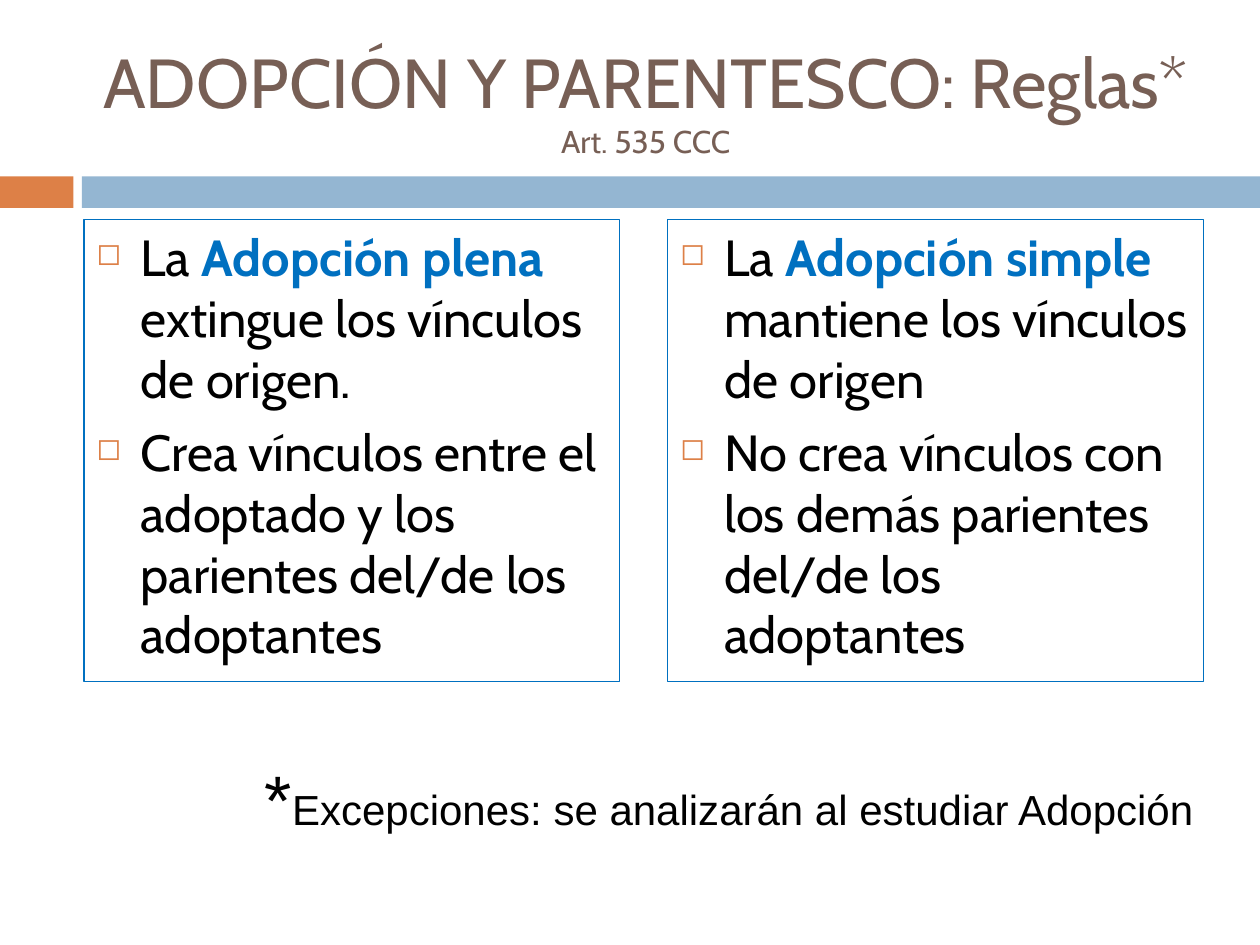
from lxml import etree
from pptx import Presentation
from pptx.dml.color import RGBColor
from pptx.enum.shapes import MSO_SHAPE
from pptx.enum.text import MSO_ANCHOR, MSO_AUTO_SIZE, PP_ALIGN
from pptx.oxml.ns import qn
from pptx.util import Pt

RECTANGLE = MSO_SHAPE.RECTANGLE
TOP, MIDDLE = MSO_ANCHOR.TOP, MSO_ANCHOR.MIDDLE
NO_AUTOFIT = MSO_AUTO_SIZE.NONE
LEFT, CENTER, RIGHT = PP_ALIGN.LEFT, PP_ALIGN.CENTER, PP_ALIGN.RIGHT

COLORS = {
    "orange": "DD8047",
    "band": "94B6D2",
    "title": "775F55",
    "accent": "0070C0",
    "text": "000000",
}
TITLE = {"name": "Cabin", "size": Pt(39.6), "bold": False}
SUBTITLE = {**TITLE, "size": Pt(18)}
BODY = {"name": "Cabin", "size": Pt(29), "bold": False}
STRONG = {**BODY, "bold": True}
NOTE = {"name": "Arial", "size": Pt(24), "bold": False}
NOTE_MARK = {**NOTE, "size": Pt(40)}

INDENT = Pt(25.2)
COLUMN_WIDTH, COLUMN_GAP = Pt(306), Pt(27.6)
COLUMNS = [
    [
        [("La ", BODY, "text"), ("Adopción plena ", STRONG, "accent"),
         ("extingue los vínculos de origen.", BODY, "text")],
        [("Crea vínculos entre el adoptado y los parientes del/de los adoptantes",
          BODY, "text")],
    ],
    [
        [("La ", BODY, "text"), ("Adopción simple ", STRONG, "accent"),
         ("mantiene los vínculos de origen", BODY, "text")],
        [("No crea vínculos con los demás parientes del/de los adoptantes",
          BODY, "text")],
    ],
]


def rgb(color):
    return RGBColor.from_string(COLORS[color])


def add_span(para, text, style, color):
    span = para.add_run()
    span.text = text
    for attribute, value in style.items():
        setattr(span.font, attribute, value)
    span.font.color.rgb = rgb(color)


def set_frame(frame, anchor):
    frame.word_wrap = True
    frame.auto_size = NO_AUTOFIT
    frame.vertical_anchor = anchor


def add_bullet(para):
    """Give the paragraph a hanging square bullet; call after setting its spacing."""
    properties = para._p.get_or_add_pPr()
    properties.set("marL", str(INDENT))
    properties.set("indent", str(-INDENT))
    color = etree.SubElement(properties, qn("a:buClr"))
    etree.SubElement(color, qn("a:srgbClr"), val=COLORS["orange"])
    etree.SubElement(properties, qn("a:buSzPct"), val="60000")
    etree.SubElement(properties, qn("a:buChar"), char="◻")


def add_rectangle(page, left, top, width, height):
    box = page.shapes.add_shape(RECTANGLE, left, top, width, height)
    box.shadow.inherit = False
    return box


def add_band(page, left, top, width, height):
    """Draw a short orange block and a long blue bar, parted by a narrow gap."""
    block, gap = Pt(42), Pt(4.8)
    bar_left = left + block + gap
    for x, part_width, color in (
        (left, block, "orange"),
        (bar_left, left + width - bar_left, "band"),
    ):
        bar = add_rectangle(page, x, top, part_width, height)
        bar.fill.solid()
        bar.fill.fore_color.rgb = rgb(color)
        bar.line.fill.background()


def place_title(page, left, top, width, height):
    title = page.shapes.title
    title.left, title.top, title.width, title.height = left, top, width, height
    set_frame(title.text_frame, MIDDLE)
    para = title.text_frame.paragraphs[0]
    para.alignment = CENTER
    add_span(para, "ADOPCIÓN Y PARENTESCO: Reglas*", TITLE, "title")
    para.add_line_break()
    add_span(para, "Art. 535 CCC", SUBTITLE, "title")


def add_column(page, items, left, top, width, height):
    box = add_rectangle(page, left, top, width, height)
    box.fill.background()
    box.line.color.rgb = rgb("accent")
    box.line.width = Pt(0.75)
    frame = box.text_frame
    set_frame(frame, TOP)
    for index, spans in enumerate(items):
        para = frame.add_paragraph() if index else frame.paragraphs[0]
        para.alignment = LEFT
        para.space_before = Pt(7)
        add_bullet(para)
        for span in spans:
            add_span(para, *span)


def add_note(page, left, top, width, height):
    box = page.shapes.add_textbox(left, top, width, height)
    set_frame(box.text_frame, TOP)
    para = box.text_frame.paragraphs[0]
    para.alignment = RIGHT
    add_span(para, "*", NOTE_MARK, "text")
    add_span(para, "Excepciones: se analizarán al estudiar Adopción", NOTE, "text")


def main():
    deck = Presentation()
    deck.slide_width, deck.slide_height = Pt(720), Pt(540)
    page = deck.slides.add_slide(deck.slide_layouts.get_by_name("Title Only"))
    margin = Pt(48)
    add_band(page, 0, Pt(100.8), deck.slide_width, Pt(18))
    place_title(page, margin, Pt(18), Pt(642), Pt(78))
    for index, items in enumerate(COLUMNS):
        left = margin + index * (COLUMN_WIDTH + COLUMN_GAP)
        add_column(page, items, left, Pt(125.3), COLUMN_WIDTH, Pt(264))
    add_note(page, margin, Pt(428.4), Pt(641), Pt(55.7))
    deck.save("out.pptx")


if __name__ == "__main__":
    main()
